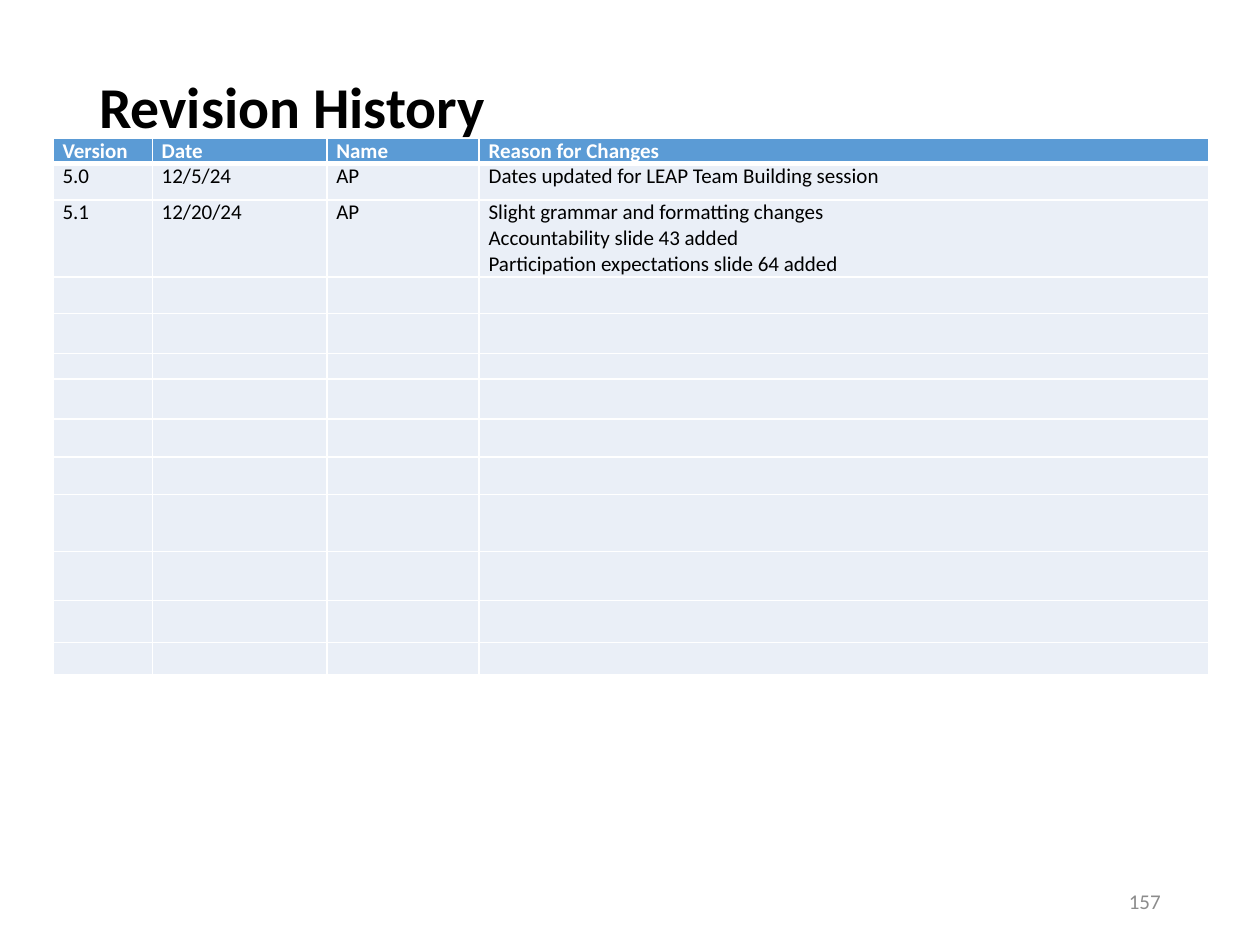
from dataclasses import dataclass
from lxml.etree import SubElement
from pptx import Presentation
from pptx.dml.color import RGBColor
from pptx.enum.text import MSO_ANCHOR, PP_ALIGN
from pptx.oxml.ns import qn
from pptx.slide import Slide
from pptx.util import Cm, Pt

COLORS = {
    "text": "000000",
    "header": "5B9BD5",
    "body": "EAEFF7",
    "white": "FFFFFF",
    "number": "8C8C8C",
}
COLUMN_WIDTHS = [2, 3.52, 3.07, 14.7]
ROW_HEIGHTS = [0.51, 0.73, 1.55, 0.74, 0.81, 0.51, 0.81, 0.76, 0.76, 1.15, 0.99, 0.84, 0.65]
REVISIONS = [
    ["Version", "Date", "Name", "Reason for Changes"],
    ["5.0", "12/5/24", "AP", "Dates updated for LEAP Team Building session"],
    [
        "5.1",
        "12/20/24",
        "AP",
        "Slight grammar and formatting changes\n"
        "Accountability slide 43 added\n"
        "Participation expectations slide 64 added",
    ],
]


@dataclass
class SlideBuilder:
    page: Slide
    font: str = "Calibri"
    table_size: int = 12

    def style(self, paragraph, size, color, bold=False):
        font = paragraph.font
        font.name = self.font
        font.size = Pt(size)
        font.bold = bold
        font.color.rgb = RGBColor.from_string(COLORS[color])

    def text(self, words, place, size, color, bold=False, align=PP_ALIGN.LEFT, spacing=1.0, bottom=0.13):
        box = self.page.shapes.add_textbox(*map(Cm, place))
        frame = box.text_frame
        frame.word_wrap = True
        frame.vertical_anchor = MSO_ANCHOR.MIDDLE
        frame.margin_bottom = Cm(bottom)
        frame.text = words
        paragraph = frame.paragraphs[0]
        paragraph.alignment = align
        paragraph.line_spacing = spacing
        self.style(paragraph, size, color, bold)

    def borders(self, cell, widths):
        properties = cell._tc.get_or_add_tcPr()
        for side, width in zip("LRTB", widths):
            line = SubElement(properties, qn(f"a:ln{side}"), w=str(Pt(width)))
            fill = SubElement(line, qn("a:solidFill"))
            SubElement(fill, qn("a:srgbClr"), val=COLORS["white"])

    def cell(self, cell, words, header, under_header):
        cell.margin_left = cell.margin_right = Cm(0.19)
        cell.margin_top = cell.margin_bottom = 0
        self.borders(cell, [1, 1, 3 if under_header else 1, 3 if header else 1])
        cell.fill.solid()
        cell.fill.fore_color.rgb = RGBColor.from_string(COLORS["header" if header else "body"])
        cell.text_frame.text = words
        for paragraph in cell.text_frame.paragraphs:
            self.style(paragraph, self.table_size, "white" if header else "text", header)
            if not words:
                SubElement(paragraph._p, qn("a:endParaRPr"), sz=str(self.table_size * 100))

    def table(self, left, top, widths, heights, records):
        place = map(Cm, (left, top, sum(widths), sum(heights)))
        table = self.page.shapes.add_table(len(heights), len(widths), *place).table
        table.horz_banding = False
        for column, width in zip(table.columns, widths):
            column.width = Cm(width)
        for index, height in enumerate(heights):
            table.rows[index].height = Cm(height)
            record = records[index] if index < len(records) else [""] * len(widths)
            for position, words in enumerate(record):
                self.cell(table.cell(index, position), words, index == 0, index == 1)


def main():
    deck = Presentation()
    deck.slide_width = Cm(25.4)
    deck.slide_height = Cm(19.05)
    builder = SlideBuilder(deck.slides.add_slide(deck.slide_layouts[6]))
    builder.text("Revision History", (1.75, 1.02, 21.9, 3.68), 33, "text", bold=True, spacing=0.9, bottom=1.4)
    builder.table(1.07, 2.79, COLUMN_WIDTHS, ROW_HEIGHTS, REVISIONS)
    builder.text("157", (17.93, 17.65, 5.72, 1.02), 12, "number", align=PP_ALIGN.RIGHT)
    deck.save("out.pptx")


if __name__ == "__main__":
    main()
